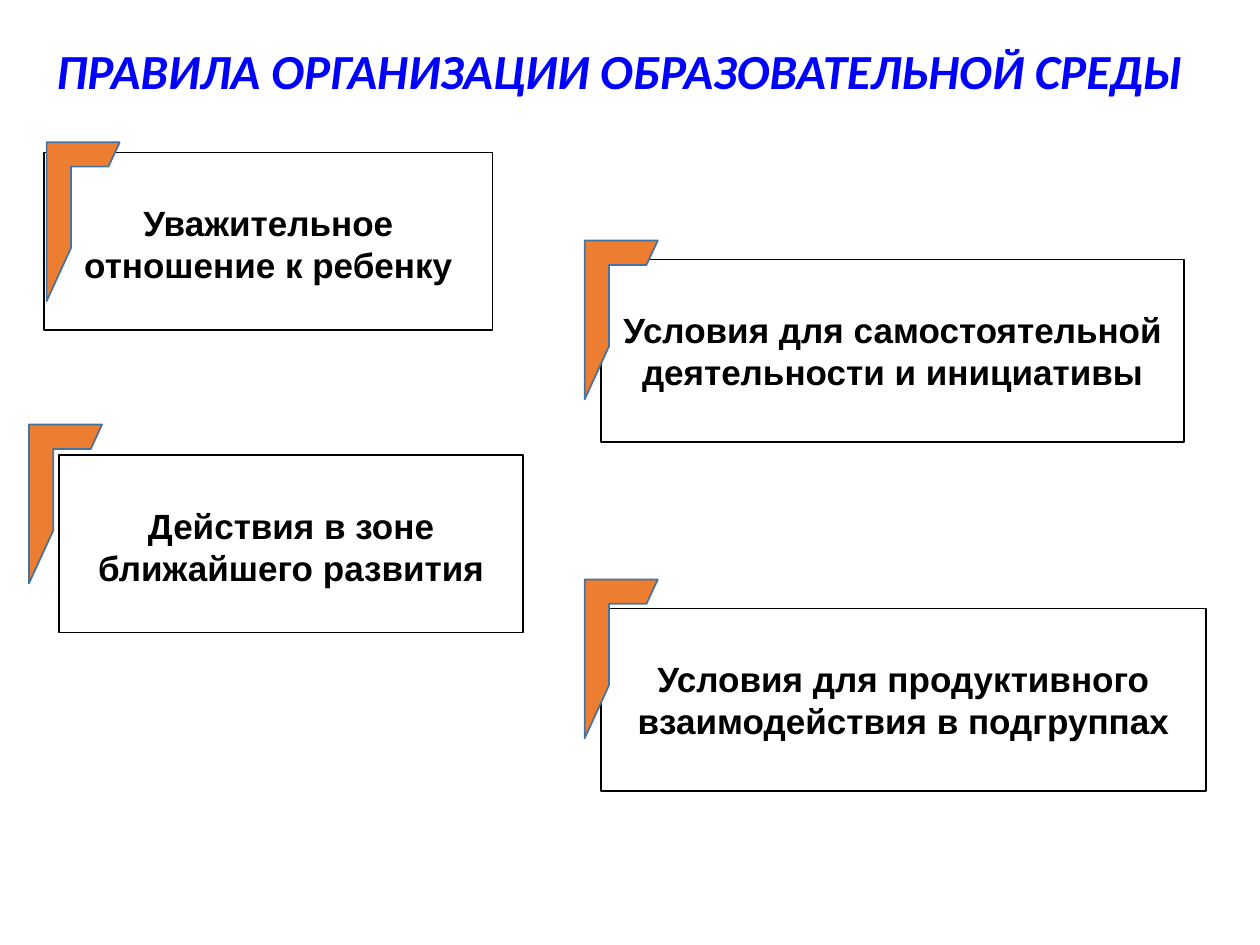
from dataclasses import dataclass

from pptx import Presentation
from pptx.dml.color import RGBColor
from pptx.enum.shapes import MSO_SHAPE
from pptx.enum.text import MSO_ANCHOR, PP_ALIGN
from pptx.util import Inches, Pt

RECTANGLE = MSO_SHAPE.RECTANGLE
HALF_FRAME = MSO_SHAPE.HALF_FRAME
TOP = MSO_ANCHOR.TOP
LEFT = PP_ALIGN.LEFT
CENTER = PP_ALIGN.CENTER

COLUMNS = 100
ROWS = 75


@dataclass(frozen=True)
class Theme:
    paper: RGBColor = RGBColor(0xFF, 0xFF, 0xFF)
    ink: RGBColor = RGBColor(0x00, 0x00, 0x00)
    title: RGBColor = RGBColor(0x00, 0x00, 0xFF)
    corner: RGBColor = RGBColor(0xED, 0x7D, 0x31)
    corner_edge: RGBColor = RGBColor(0x43, 0x73, 0x9E)
    title_font: str = "Calibri"
    rule_font: str = "Arial"
    title_size: int = 28
    rule_size: int = 20
    line_width: int = 1


@dataclass(frozen=True)
class Area:
    column: float
    row: float
    columns: float
    rows: float


@dataclass(frozen=True)
class Rule:
    text: str
    area: Area
    corner_column: float
    corner_row: float


THEME = Theme()
TITLE = "ПРАВИЛА ОРГАНИЗАЦИИ ОБРАЗОВАТЕЛЬНОЙ СРЕДЫ"
TITLE_AREA = Area(3.5, 2.7, 94.4, 5.7)
CORNER_COLUMNS = 5.8
CORNER_ROWS = 12.6
TITLE_INSET_ROWS = 0.5
RULE_INSET_ROWS = 3.9

RULES = (
    Rule("Действия в зоне ближайшего развития", Area(4.7, 36.1, 36.8, 14.1), 2.3, 33.7),
    Rule("Условия для самостоятельной деятельности и инициативы",
         Area(47.7, 20.6, 46.3, 14.5), 46.4, 19.1),
    Rule("Условия для продуктивного взаимодействия в подгруппах",
         Area(47.7, 48.3, 48, 14.5), 46.4, 46),
    Rule("Уважительное отношение к ребенку", Area(3.5, 12.1, 35.6, 14.1), 3.7, 11.3),
)


def add_block(deck, page, kind, area: Area, fill: RGBColor, edge: RGBColor | None):
    column = deck.slide_width / COLUMNS
    row = deck.slide_height / ROWS
    block = page.shapes.add_shape(
        kind, round(area.column * column), round(area.row * row),
        round(area.columns * column), round(area.rows * row))
    block.shadow.inherit = False
    block.fill.solid()
    block.fill.fore_color.rgb = fill
    if edge is None:
        block.line.fill.background()
    else:
        block.line.color.rgb = edge
        block.line.width = Pt(THEME.line_width)
    return block


def write(deck, box, text: str, inset_rows: float, alignment, font_name: str,
          size: int, color: RGBColor, italic: bool) -> None:
    frame = box.text_frame
    frame.word_wrap = True
    frame.vertical_anchor = TOP
    frame.margin_top = round(inset_rows * deck.slide_height / ROWS)
    para = frame.paragraphs[0]
    para.alignment = alignment
    span = para.add_run()
    span.text = text
    span.font.name = font_name
    span.font.size = Pt(size)
    span.font.bold = True
    span.font.italic = italic
    span.font.color.rgb = color


def add_title(deck, page) -> None:
    box = add_block(deck, page, RECTANGLE, TITLE_AREA, THEME.paper, None)
    write(deck, box, TITLE, TITLE_INSET_ROWS, LEFT, THEME.title_font,
          THEME.title_size, THEME.title, True)


def add_rule(deck, page, rule: Rule) -> None:
    box = add_block(deck, page, RECTANGLE, rule.area, THEME.paper, THEME.ink)
    write(deck, box, rule.text, RULE_INSET_ROWS, CENTER, THEME.rule_font,
          THEME.rule_size, THEME.ink, False)
    corner = Area(rule.corner_column, rule.corner_row, CORNER_COLUMNS, CORNER_ROWS)
    add_block(deck, page, HALF_FRAME, corner, THEME.corner, THEME.corner_edge)


def main() -> None:
    deck = Presentation()
    deck.slide_width = Inches(10)
    deck.slide_height = Inches(7.5)
    page = deck.slides.add_slide(deck.slide_layouts[6])
    add_title(deck, page)
    for rule in RULES:
        add_rule(deck, page, rule)
    deck.save("out.pptx")


if __name__ == "__main__":
    main()
